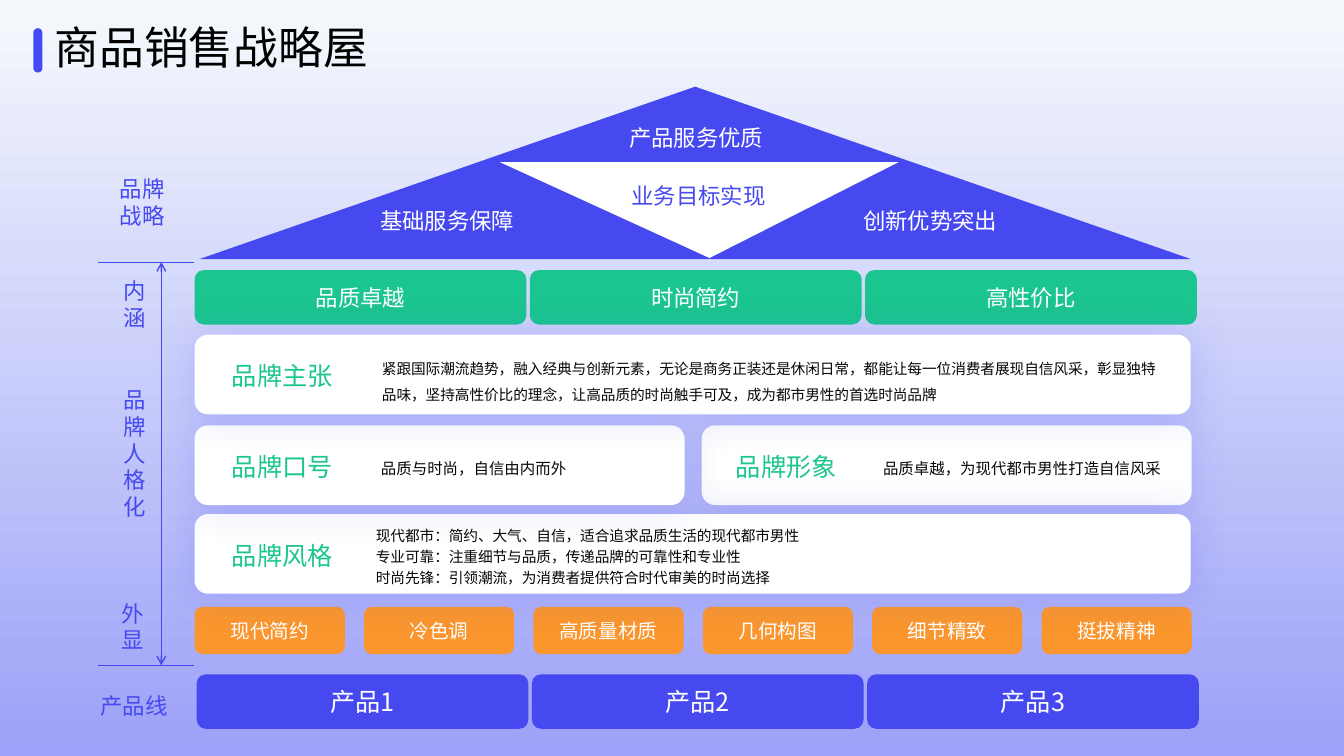
import pptx
import pptx.util
import pptx.dml.color
import pptx.enum.shapes
import pptx.enum.text
import pptx.oxml
import pptx.oxml.ns
from lxml import etree

Inches, Pt = pptx.util.Inches, pptx.util.Pt
RGBColor = pptx.dml.color.RGBColor
SHAPE = pptx.enum.shapes.MSO_SHAPE
ALIGN = pptx.enum.text.PP_ALIGN
ANCHOR = pptx.enum.text.MSO_ANCHOR
AUTO = pptx.enum.text.MSO_AUTO_SIZE
qn = pptx.oxml.ns.qn

FONT = "Noto Sans CJK SC"
BLUE = RGBColor(0x46, 0x49, 0xEF)
TITLE_BAR = RGBColor(0x44, 0x49, 0xF4)
GREEN = RGBColor(0x1B, 0xC5, 0x8F)
ORANGE = RGBColor(0xFA, 0x96, 0x2D)
WHITE = RGBColor(0xFF, 0xFF, 0xFF)
INK = RGBColor(0x06, 0x06, 0x07)
BLACK = RGBColor(0, 0, 0)
BG_TOP = RGBColor(0xF5, 0xF9, 0xFC)
BG_BOTTOM = RGBColor(0x9D, 0xA1, 0xF8)

# Content
TITLE = "商品销售战略屋"
# text, left, top, width, colour
ROOF_LABELS = [
    ("业务目标实现", 6.13, 1.76, 1.6, BLUE),
    ("基础服务保障", 3.66, 2.01, 1.55, WHITE),
    ("创新优势突出", 8.45, 2.01, 1.55, WHITE),
    ("产品服务优质", 6.13, 1.18, 1.55, WHITE),
]
# texts, left, top, pitch, width, height, colour, size
ROWS = [
    (["品质卓越", "时尚简约", "高性价比"], 1.93, 2.68, 3.325, 3.29, 0.54, GREEN, 16),
    (["现代简约", "冷色调", "高质量材质", "几何构图", "细节精致", "挺拔精神"],
     1.93, 6.02, 1.68, 1.49, 0.47, ORANGE, 14),
    (["产品1", "产品2", "产品3"], 1.95, 6.69, 3.325, 3.29, 0.54, BLUE, 18),
]
# lines, left, top, width, height, wrap
SIDE_LABELS = [
    (["品牌战略"], 1.04, 1.69, 0.74, 0.64, True),
    (list("内涵"), 0.97, 2.7, 0.74, 0.64, True),
    (list("品牌人格化"), 0.97, 3.78, 0.74, 1.45, True),
    (list("外显"), 0.95, 5.9, 0.74, 0.64, True),
    (["产品线"], 0.89, 6.82, 0.88, 0.37, False),
]
# heading, card (left, top, width), heading left,
# body lines, body box, size, line spacing, wrap
CARDS = [
    ("品牌形象", (6.96, 4.22, 4.86), 7.12,
     ["品质卓越，为现代都市男性打造自信风采"],
     (8.66, 4.51, 2.98, 0.29), 11, None, False),
    ("品牌风格", (1.93, 5.1, 9.88), 2.12,
     ["现代都市：简约、大气、自信，适合追求品质生活的现代都市男性",
      "专业可靠：注重细节与品质，传递品牌的可靠性和专业性",
      "时尚先锋：引领潮流，为消费者提供符合时代审美的时尚选择"],
     (3.63, 5.14, 4.47, 0.71), 10.5, 1.2, False),
    ("品牌口号", (1.93, 4.22, 4.86), 2.12,
     ["品质与时尚，自信由内而外"],
     (3.68, 4.51, 2.05, 0.29), 11, None, False),
    ("品牌主张", (1.93, 3.32, 9.88), 2.12,
     ["紧跟国际潮流趋势，融入经典与创新元素，无论是商务正装还是休闲日常，"
      "都能让每一位消费者展现自信风采，彰显独特品味，坚持高性价比的理念，"
      "让高品质的时尚触手可及，成为都市男性的首选时尚品牌"],
     (3.69, 3.43, 7.89, 0.6), 10.5, 1.5, True),
]
CARD_HEIGHT = 0.79
AXIS_LEFT, AXIS_RIGHT, AXIS_X = 0.97, 1.92, 1.6
AXIS_TOP, AXIS_BOTTOM = 2.6, 6.6


def write(tf, lines, size, color, align=ALIGN.CENTER, spacing=None):
    for i, line in enumerate(lines):
        p = tf.paragraphs[0] if i == 0 else tf.add_paragraph()
        p.text = line
        p.alignment = align
        if spacing:
            p.line_spacing = spacing
        p.font.size = Pt(size)
        p.font.name = FONT
        p.font.color.rgb = color
        props = p._p.pPr.find(qn("a:defRPr"))
        etree.SubElement(props, qn("a:ea")).set("typeface", FONT)


def add_text(lines, box, size, color, wrap=False, **style):
    tf = slide.shapes.add_textbox(*map(Inches, box)).text_frame
    tf.word_wrap = wrap
    tf.auto_size = AUTO.SHAPE_TO_FIT_TEXT
    write(tf, lines, size, color, **style)


def add_block(kind, box, color):
    sp = slide.shapes.add_shape(kind, *map(Inches, box))
    sp.shadow.inherit = False
    sp.fill.solid()
    sp.fill.fore_color.rgb = color
    sp.line.fill.background()
    return sp


def add_glow(sp):
    effects = sp._element.spPr.find(qn("a:effectLst"))
    shadow = etree.SubElement(effects, qn("a:outerShdw"), blurRad=str(Pt(30)),
                              dist="0", dir="0", algn="ctr", rotWithShape="0")
    color = etree.SubElement(shadow, qn("a:srgbClr"), val=str(BLUE))
    etree.SubElement(color, qn("a:alpha"), val="20000")


def add_line(x1, y1, x2, y2, width, arrows=False):
    line = slide.shapes.add_connector(pptx.enum.shapes.MSO_CONNECTOR.STRAIGHT,
                                      *map(Inches, (x1, y1, x2, y2)))
    line.line.color.rgb = BLUE
    line.line.width = Pt(width)
    if arrows:
        ln = line._element.spPr.find(qn("a:ln"))
        for end in ("a:headEnd", "a:tailEnd"):
            etree.SubElement(ln, qn(end), type="arrow")
    etree.SubElement(line._element.spPr, qn("a:effectLst"))


prs = pptx.Presentation()
prs.slide_width, prs.slide_height = Inches(13.33), Inches(7.5)
slide = prs.slides.add_slide(prs.slide_layouts[5])

# Background
bg = slide.background.fill
bg.gradient()
bg.gradient_angle = 270
for stop, position, color in zip(bg.gradient_stops, (0, 1), (BG_TOP, BG_BOTTOM)):
    stop.position = position
    stop.color.rgb = color

# Title
title = slide.shapes.title
title.left, title.top, title.width, title.height = map(Inches, (0.44, 0.15, 3.34, 0.64))
tf = title.text_frame
tf.word_wrap = False
tf.auto_size = AUTO.SHAPE_TO_FIT_TEXT
tf.vertical_anchor = ANCHOR.TOP
write(tf, [TITLE], 32, BLACK, ALIGN.LEFT)
bar = add_block(SHAPE.ROUNDED_RECTANGLE, (0.33, 0.28, 0.09, 0.44), TITLE_BAR)
bar.adjustments[0] = 0.5

# Roof
add_block(SHAPE.ISOSCELES_TRIANGLE, (1.98, 0.86, 9.83, 1.71), BLUE)
goal = add_block(SHAPE.ISOSCELES_TRIANGLE, (4.96, 1.61, 3.95, 0.95), WHITE)
goal.adjustments[0] = 0.526
goal._element.spPr.find(qn("a:xfrm")).set("flipV", "1")
for text, left, top, width, color in ROOF_LABELS:
    add_text([text], (left, top, width, 0.37), 16, color)

# Rows of blocks
for texts, left, top, pitch, width, height, color, size in ROWS:
    for i, text in enumerate(texts):
        sp = add_block(SHAPE.ROUNDED_RECTANGLE,
                       (left + i * pitch, top, width, height), color)
        sp.text_frame.vertical_anchor = ANCHOR.MIDDLE
        write(sp.text_frame, [text], size, WHITE)

# Side labels and axis
for lines, left, top, width, height, wrap in SIDE_LABELS:
    add_text(lines, (left, top, width, height), 16, BLUE, wrap)
for y in (AXIS_TOP, AXIS_BOTTOM):
    add_line(AXIS_LEFT, y, AXIS_RIGHT, y, 0.5)
add_line(AXIS_X, AXIS_TOP, AXIS_X, AXIS_BOTTOM, 1, arrows=True)

# Brand cards, then their text above every shadow
for card in CARDS:
    add_glow(add_block(SHAPE.ROUNDED_RECTANGLE, (*card[1], CARD_HEIGHT), WHITE))
for heading, card, heading_left, body, box, size, spacing, wrap in CARDS:
    add_text([heading], (heading_left, card[1] + 0.21, 1.36, 0.4), 18, GREEN, True)
    add_text(body, box, size, INK, wrap, align=ALIGN.LEFT, spacing=spacing)

prs.save("out.pptx")
